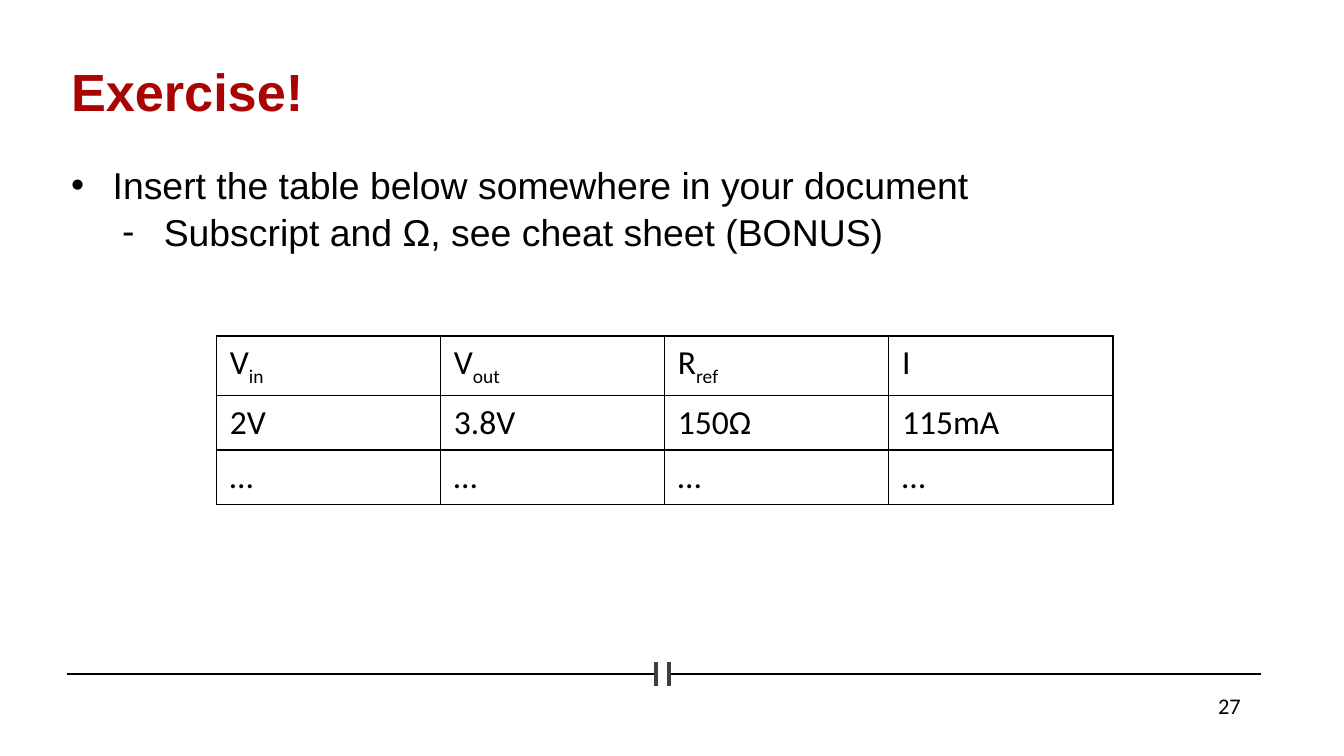
from dataclasses import dataclass

from lxml import etree
from pptx import Presentation
from pptx import util as u
from pptx.dml.color import RGBColor
from pptx.enum import shapes, text
from pptx.oxml.ns import qn


@dataclass(frozen=True)
class Theme:
    ink: str = "000000"
    accent: str = "A90303"
    mark: str = "404040"
    text_font: str = "Arial"
    table_font: str = "Calibri"
    title_size: float = 28
    body_size: float = 20
    table_size: float = 18
    number_size: float = 12
    rule_width: float = 1
    mark_width: float = 2.25


THEME = Theme()
COLUMNS, ROWS = 100, 56.25
UNIT = u.Inches(0.1)
LEFT, RIGHT = 4.3, 93.8
RULE_Y = 50.15
HEADERS = [("V", "in"), ("V", "out"), ("R", "ref"), ("I", "")]
VALUES = [["2V", "3.8V", "150Ω", "115mA"], ["…"] * 4]


def grid(*units):
    """Turn counts of grid columns or rows into lengths."""
    return [u.Emu(round(count * UNIT)) for count in units]


def add_run(paragraph, words, size, font=THEME.text_font, color=THEME.ink,
            bold=False, subscript=False):
    run = paragraph.add_run()
    run.text = words
    settings = {"name": font, "size": u.Pt(size), "bold": bold}
    for name, value in settings.items():
        setattr(run.font, name, value)
    run.font.color.rgb = RGBColor.from_string(color)
    if subscript:
        run.font._element.set("baseline", "-25000")


def add_text_box(slide, box, anchor=text.MSO_ANCHOR.TOP):
    frame = slide.shapes.add_textbox(*grid(*box)).text_frame
    frame.word_wrap = True
    frame.vertical_anchor = anchor
    return frame


def add_bullet(paragraph, symbol, indent):
    properties = paragraph._p.get_or_add_pPr()
    properties.set("marL", str(u.Inches(indent)))
    properties.set("indent", str(u.Inches(-0.31)))
    etree.SubElement(properties, qn("a:buFont")).set("typeface", THEME.text_font)
    etree.SubElement(properties, qn("a:buChar")).set("char", symbol)


def add_line(slide, ends, color, width):
    line = slide.shapes.add_connector(
        shapes.MSO_CONNECTOR.STRAIGHT, *grid(*ends))
    line.line.color.rgb = RGBColor.from_string(color)
    line.line.width = u.Pt(width)
    etree.SubElement(line._element.spPr, qn("a:effectLst"))


def add_footer(slide):
    """Draw the split rule with its two upright marks and the page number."""
    for outer, inner in ((5, 48.8), (RIGHT, 49.8)):
        add_line(slide, (inner, RULE_Y, outer, RULE_Y),
                 THEME.ink, THEME.rule_width)
        add_line(slide, (inner, RULE_Y - 0.9, inner, RULE_Y + 0.9),
                 THEME.mark, THEME.mark_width)
    paragraph = add_text_box(slide, (87, 51, 6.3, 4)).paragraphs[0]
    paragraph.alignment = text.PP_ALIGN.RIGHT
    add_run(paragraph, "27", THEME.number_size, THEME.table_font)


def add_title(slide, words):
    frame = add_text_box(slide, (LEFT, 2.9, RIGHT - LEFT, 7.7),
                         text.MSO_ANCHOR.MIDDLE)
    add_run(frame.paragraphs[0], words, THEME.title_size,
            color=THEME.accent, bold=True)


def add_body(slide):
    frame = add_text_box(slide, (LEFT, 11.6, RIGHT - LEFT, 36.2))
    main_point = frame.paragraphs[0]
    add_bullet(main_point, "•", 0.31)
    add_run(main_point, "Insert the table below somewhere in your document",
            THEME.body_size)
    sub_point = frame.add_paragraph()
    sub_point.level = 1
    sub_point.space_before = u.Pt(1)
    add_bullet(sub_point, "-", 0.69)
    add_run(sub_point, "Subscript and Ω, see cheat sheet (BONUS)",
            THEME.body_size)


def style_cell(cell):
    """Give a cell four black borders and no fill."""
    properties = cell._tc.get_or_add_tcPr()
    for side in ("lnL", "lnR", "lnT", "lnB"):
        border = etree.SubElement(properties, qn(f"a:{side}"))
        border.set("w", str(u.Pt(THEME.rule_width)))
        fill = etree.SubElement(border, qn("a:solidFill"))
        etree.SubElement(fill, qn("a:srgbClr")).set("val", THEME.ink)
    cell.fill.background()


def add_measurements(slide):
    rows = [HEADERS] + [[(value, "") for value in row] for row in VALUES]
    table = slide.shapes.add_table(
        len(rows), len(HEADERS), *grid(16.1, 25, 66.7, 12.2)).table
    table.first_row = table.horz_banding = False
    for row_index, row in enumerate(rows):
        for column_index, (words, subscript) in enumerate(row):
            cell = table.cell(row_index, column_index)
            style_cell(cell)
            paragraph = cell.text_frame.paragraphs[0]
            add_run(paragraph, words, THEME.table_size, THEME.table_font)
            if subscript:
                add_run(paragraph, subscript, THEME.table_size,
                        THEME.table_font, subscript=True)


def main():
    presentation = Presentation()
    presentation.slide_width, presentation.slide_height = grid(COLUMNS, ROWS)
    slide = presentation.slides.add_slide(presentation.slide_layouts[6])
    add_footer(slide)
    add_title(slide, "Exercise!")
    add_body(slide)
    add_measurements(slide)
    presentation.save("out.pptx")


if __name__ == "__main__":
    main()
